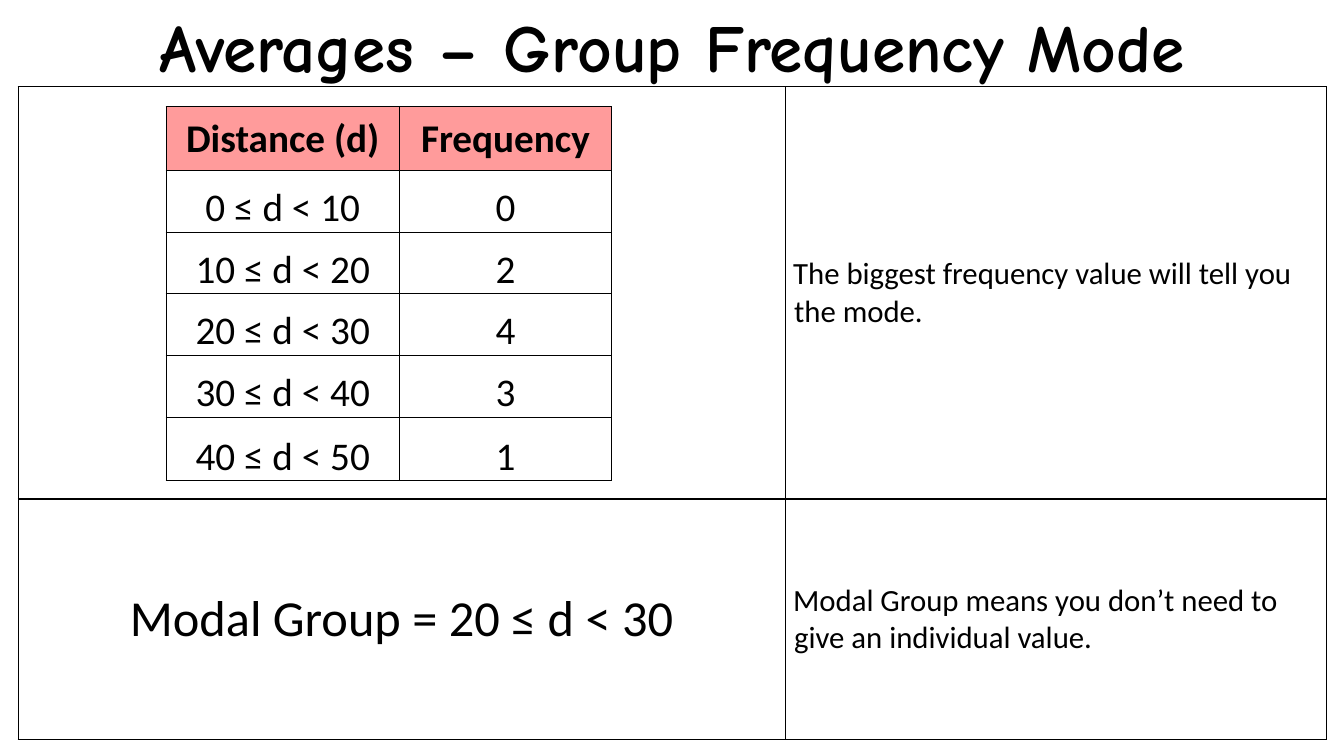
"""Build the slide on finding the modal group of a grouped frequency table."""
from dataclasses import dataclass

import lxml.etree
import pptx
import pptx.dml.color
import pptx.enum.text
import pptx.oxml.ns
import pptx.util

Pt = pptx.util.Pt
Align = pptx.enum.text.PP_ALIGN
Anchor = pptx.enum.text.MSO_ANCHOR


@dataclass(frozen=True)
class Theme:
    """Fonts, colours and type sizes of the slide."""
    title_font: str = "Comic Neue"
    body_font: str = "Calibri"
    ink: str = "000000"
    paper: str = "FFFFFF"
    header: str = "FF9B9B"
    title_size: int = 48
    answer_size: int = 36
    data_size: int = 28
    note_size: int = 22


class Board:
    """Draws styled elements on one slide."""

    def __init__(self, slide, theme):
        """Keep the slide and its theme."""
        self.slide = slide
        self.theme = theme

    def label(self, frame, text, size, font, bold=False, align=Align.CENTER, hang=None):
        """Put one styled run in the first paragraph of a frame."""
        paragraph = frame.paragraphs[0]
        paragraph.alignment = align
        if hang:
            properties = paragraph._p.get_or_add_pPr()
            properties.set("marL", str(Pt(hang[0])))
            properties.set("indent", str(Pt(hang[1])))
        run = paragraph.add_run()
        run.text = text
        run.font.name = font
        run.font.size = Pt(size)
        run.font.bold = bold
        run.font.color.rgb = pptx.dml.color.RGBColor.from_string(self.theme.ink)

    def title(self, text, left, top, width, height):
        """Add the centred slide title."""
        box = self.slide.shapes.add_textbox(Pt(left), Pt(top), Pt(width), Pt(height))
        box.text_frame.word_wrap = True
        box.text_frame.auto_size = pptx.enum.text.MSO_AUTO_SIZE.SHAPE_TO_FIT_TEXT
        self.label(box.text_frame, text, self.theme.title_size, self.theme.title_font, True)

    def table(self, left, top, widths, heights):
        """Add a plain table with the given column widths and row heights."""
        grid = self.slide.shapes.add_table(
            len(heights), len(widths), Pt(left), Pt(top),
            Pt(sum(widths)), Pt(sum(heights))).table
        grid.first_row = grid.horz_banding = False
        for column, width in zip(grid.columns, widths):
            column.width = Pt(width)
        for row, height in zip(grid.rows, heights):
            row.height = Pt(height)
        return grid

    def cell(self, cell, margins, anchor, fill=None, top=1, bottom=1):
        """Set the margins, anchor, borders and fill of a cell."""
        cell.margin_left = cell.margin_right = Pt(margins[0])
        cell.margin_top = Pt(margins[1])
        cell.margin_bottom = 0
        cell.vertical_anchor = anchor
        properties = cell._tc.get_or_add_tcPr()
        qn = pptx.oxml.ns.qn
        for side, width in (("L", 1), ("R", 1), ("T", top), ("B", bottom)):
            line = lxml.etree.SubElement(properties, qn(f"a:ln{side}"), w=str(Pt(width)))
            solid = lxml.etree.SubElement(line, qn("a:solidFill"))
            lxml.etree.SubElement(solid, qn("a:srgbClr"), val=self.theme.ink)
        if fill:
            cell.fill.solid()
            cell.fill.fore_color.rgb = pptx.dml.color.RGBColor.from_string(fill)
        else:
            cell.fill.background()

    def explanation(self, answer, notes):
        """Add the outer table with the answer and the notes beside it."""
        theme = self.theme
        grid = self.table(12.96, 61.92, (547.9, 386.6), (294.5, 172.1))
        for cell in grid.iter_cells():
            self.cell(cell, (5, 0), Anchor.MIDDLE)
        self.label(grid.cell(1, 0).text_frame, answer, theme.answer_size,
                   theme.body_font, hang=(14.4, -14.4))
        for row, note in enumerate(notes):
            self.label(grid.cell(row, 1).text_frame, note, theme.note_size,
                       theme.body_font, align=Align.LEFT, hang=(1.44, -0.72))

    def frequencies(self, rows):
        """Add the frequency table, its first row being the header."""
        theme = self.theme
        last = len(rows) - 1
        heights = [45.4 if row in (0, last) else 44.1 for row in range(len(rows))]
        grid = self.table(118.8, 76.3, (166.3, 151.9), heights)
        for row, values in enumerate(rows):
            header = row == 0
            for column, value in enumerate(values):
                cell = grid.cell(row, column)
                self.cell(cell, (0.75, 0.75), Anchor.MIDDLE if header else Anchor.BOTTOM,
                          theme.header if header else theme.paper,
                          top=1 if row < 2 else 0.5,
                          bottom=1 if row in (0, last) else 0.5)
                self.label(cell.text_frame, value, theme.data_size, theme.body_font, header)


def main():
    """Build and save the slide."""
    presentation = pptx.Presentation()
    presentation.slide_width = Pt(960)
    presentation.slide_height = Pt(540)
    board = Board(presentation.slides.add_slide(presentation.slide_layouts[6]), Theme())
    board.explanation("Modal Group = 20 ≤ d < 30", (
        "The biggest frequency value will tell you the mode.",
        "Modal Group means you don’t need to give an individual value."))
    board.title("Averages – Group Frequency Mode", 0, 0, 960, 65.5)
    groups = [(f"{10 * step} ≤ d < {10 * step + 10}", count)
              for step, count in enumerate("02431")]
    board.frequencies([("Distance (d)", "Frequency"), *groups])
    presentation.save("out.pptx")


if __name__ == "__main__":
    main()
